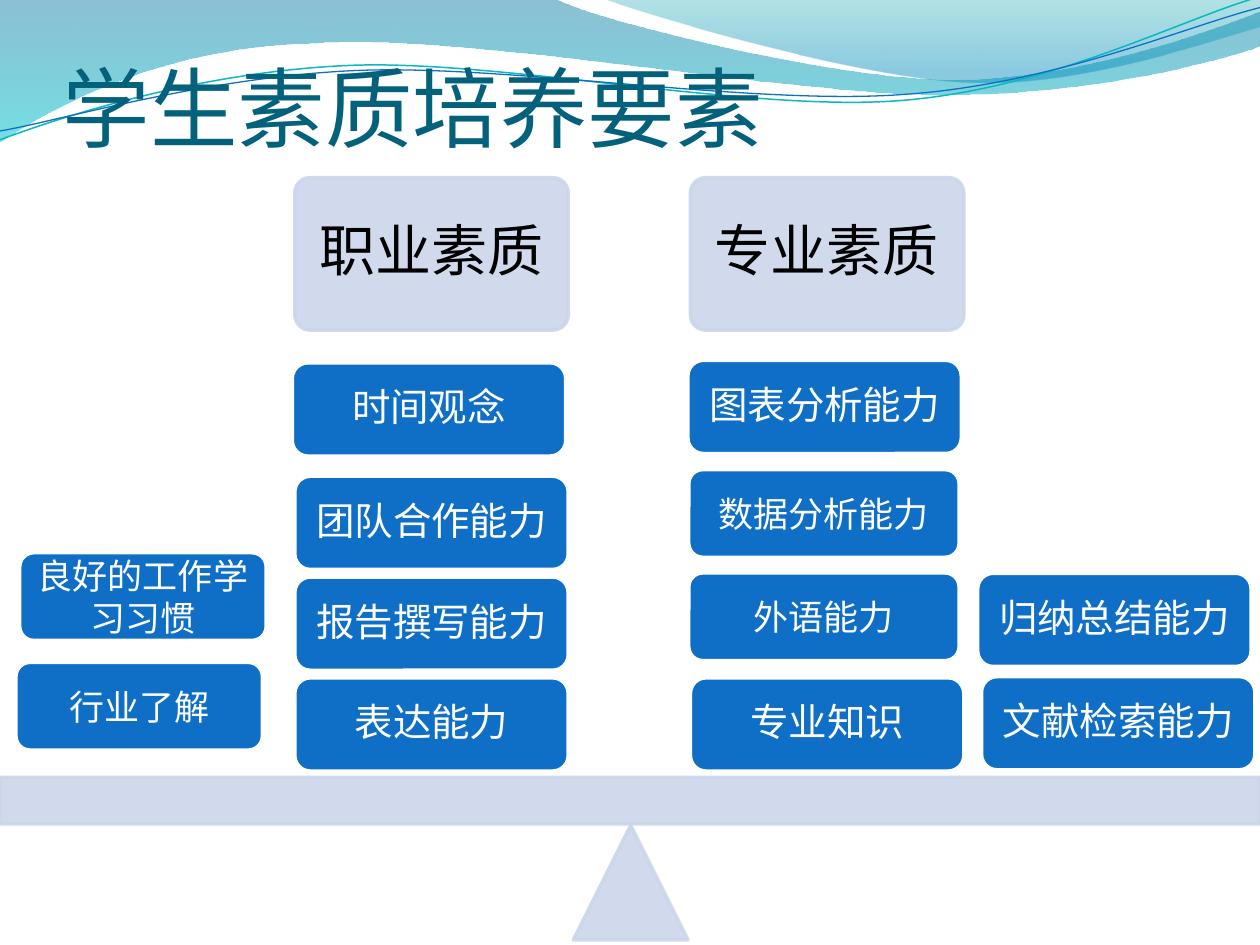
from lxml.etree import SubElement
from pptx import Presentation
from pptx.dml.color import RGBColor
from pptx.enum.shapes import MSO_SHAPE
from pptx.enum.text import MSO_ANCHOR, PP_ALIGN
from pptx.oxml.ns import qn
from pptx.util import Inches, Pt

BLUE, PALE, WHITE, TEAL = "0F6FC6", "CCD5EA", "FFFFFF", "04617B"

deck = Presentation()
deck.slide_width, deck.slide_height = Inches(10), Inches(7.5)
unit = deck.slide_width / 100  # every length is a percentage of the slide's width
page = deck.slides.add_slide(deck.slide_layouts[6])


def add_box(kind, place, fill, line, line_width, alpha=100):
    box = page.shapes.add_shape(kind, *[round(unit * share) for share in place])
    box.shadow.inherit = False
    box.fill.solid()
    box.fill.fore_color.rgb = RGBColor.from_string(fill)
    box.line.color.rgb = RGBColor.from_string(line)
    box.line.width = Pt(line_width)
    if alpha < 100:
        for color in box._element.spPr.iter(qn("a:srgbClr")):
            SubElement(color, qn("a:alpha"), val=str(alpha * 1000))
    return box


def write(box, text, size, color, font="Vollkorn", align=PP_ALIGN.CENTER,
          anchor=MSO_ANCHOR.MIDDLE, insets=(1, 0.5, 1, 0.5), spacing=1):
    frame = box.text_frame
    frame.word_wrap = True
    frame.vertical_anchor = anchor
    (frame.margin_left, frame.margin_top,
     frame.margin_right, frame.margin_bottom) = [round(unit * inset) for inset in insets]
    para = frame.paragraphs[0]
    para.text = text
    para.alignment = align
    para.line_spacing = spacing
    span = para.runs[0]
    span.font.name = font
    span.font.size = Pt(size)
    span.font.color.rgb = RGBColor.from_string(color)


# Waves along the top: a pair is a straight step, six numbers are a Bezier curve.
# Gradient stops are (position, colour, opacity); lines are (colour, width).
waves = [
    ([(0, 0), (44, -0.1), (47.6, 1.7, 66.4, 6.3, 75.8, 6.3), (85.3, 6.3, 95.8, 2.6, 100, 0.9),
      (100.1, 3.6), (98.3, 4.4, 87, 7.6, 74.6, 7.5), (62.2, 7.5, 38.2, 2.8, 25.7, 3.4),
      (12.9, 3.6, 4.6, 8.3, -0.1, 11.3)],
     [(0, "0074A1", 45), (1, "00C6CF", 55)], None),
    ([(47.9, -0.1), (50.9, 1.1, 68.2, 6.2, 76.9, 6.5), (85.6, 6.9, 96.1, 3.2, 100, 2.1),
      (100, 0)],
     [(0, "00A1A9", 30), (0.8, "008BBF", 45)], None),
    ([(0, 11.1), (4.8, 9.3, 15.8, 5.7, 27.7, 5.2), (39.5, 4.7, 59.3, 8.9, 71.3, 8),
      (83.3, 7.1, 93.8, 1.5, 99.8, -0.2)],
     None, ("0AB8BF", 0.85)),
    ([(0, 10.4), (4.7, 9.6, 16.4, 6.1, 28.3, 5.6), (40.3, 5.1, 59.7, 8.4, 71.7, 7.5),
      (83.6, 6.7, 94.1, 2.1, 100, 0.6)],
     None, ("0F6FC6", 0.75)),
]
for steps, stops, stroke in waves:
    points = [(unit * x, unit * y) for step in steps for x, y in zip(step[::2], step[1::2])]
    builder = page.shapes.build_freeform(*points[0])
    builder.add_line_segments(points[1:], close=stops is not None)
    wave = builder.convert_to_shape()
    wave.shadow.inherit = False

    # Join the three points of each curve into one Bezier segment
    segments = iter(list(wave._element.spPr.iter(qn("a:lnTo"))))
    for step in steps[1:]:
        segment = next(segments)
        if len(step) == 6:
            segment.tag = qn("a:cubicBezTo")
            for extra in (next(segments), next(segments)):
                segment.append(extra[0])
                extra.getparent().remove(extra)

    if stops:
        wave.line.fill.background()
        wave.fill.gradient()
        wave.fill.gradient_angle = 270
        for stop, (position, color, alpha) in zip(wave.fill.gradient_stops, stops):
            stop.position = position
            stop.color.rgb = RGBColor.from_string(color)
        for color, (position, name, alpha) in zip(wave._element.spPr.iter(qn("a:srgbClr")), stops):
            SubElement(color, qn("a:alpha"), val=str(alpha * 1000))
    else:
        wave.fill.background()
        wave.line.color.rgb = RGBColor.from_string(stroke[0])
        wave.line.width = Pt(stroke[1])

title = page.shapes.add_textbox(*[round(unit * share) for share in (5, 0.1, 90, 12.5)])
write(title, "学生素质培养要素", 50, TEAL, "Calibri", PP_ALIGN.LEFT, MSO_ANCHOR.BOTTOM,
      (0, 0.5, 0, 0))

# The two sides of the balance, its fulcrum and its beam
for left, heading in [(23.4, "职业素质"), (54.8, "专业素质")]:
    header = add_box(MSO_SHAPE.ROUNDED_RECTANGLE, (left, 14.1, 21.7, 12.1), PALE, PALE, 2, 90)
    header.adjustments[0] = 0.1
    write(header, heading, 32, "000000", insets=[0.5] * 4, spacing=0.9)
add_box(MSO_SHAPE.ISOSCELES_TRIANGLE, (45.5, 65.5, 9.1, 9.1), PALE, PALE, 2, 90)
add_box(MSO_SHAPE.RECTANGLE, (0, 61.7, 100, 3.7), PALE, PALE, 2, 90)

weights = [
    (54.8, 53.8, "专业知识"),
    (77.9, 53.7, "文献检索能力"),
    (77.6, 45.5, "归纳总结能力"),
    (54.6, 28.6, "图表分析能力"),
    (23.4, 53.8, "表达能力"),
    (23.4, 45.8, "报告撰写能力"),
    (23.4, 37.8, "团队合作能力"),
    (23.2, 28.8, "时间观念"),
]
for left, top, text in weights:
    weight = add_box(MSO_SHAPE.ROUNDED_RECTANGLE, (left, top, 21.7, 7.4), BLUE, WHITE, 2)
    write(weight, text, 22, WHITE, insets=[0.9] * 4, spacing=0.9)

small_weights = [
    (1.2, 52.5, 19.7, "行业了解"),
    (1.5, 43.8, 19.7, "良好的工作学习习惯"),
    (54.6, 45.4, 21.6, "外语能力"),
    (54.6, 37.2, 21.6, "数据分析能力"),
]
for left, top, width, text in small_weights:
    weight = add_box(MSO_SHAPE.ROUNDED_RECTANGLE, (left, top, width, 7.1), BLUE, WHITE, 3)
    write(weight, text, 20, WHITE)

deck.save("out.pptx")
